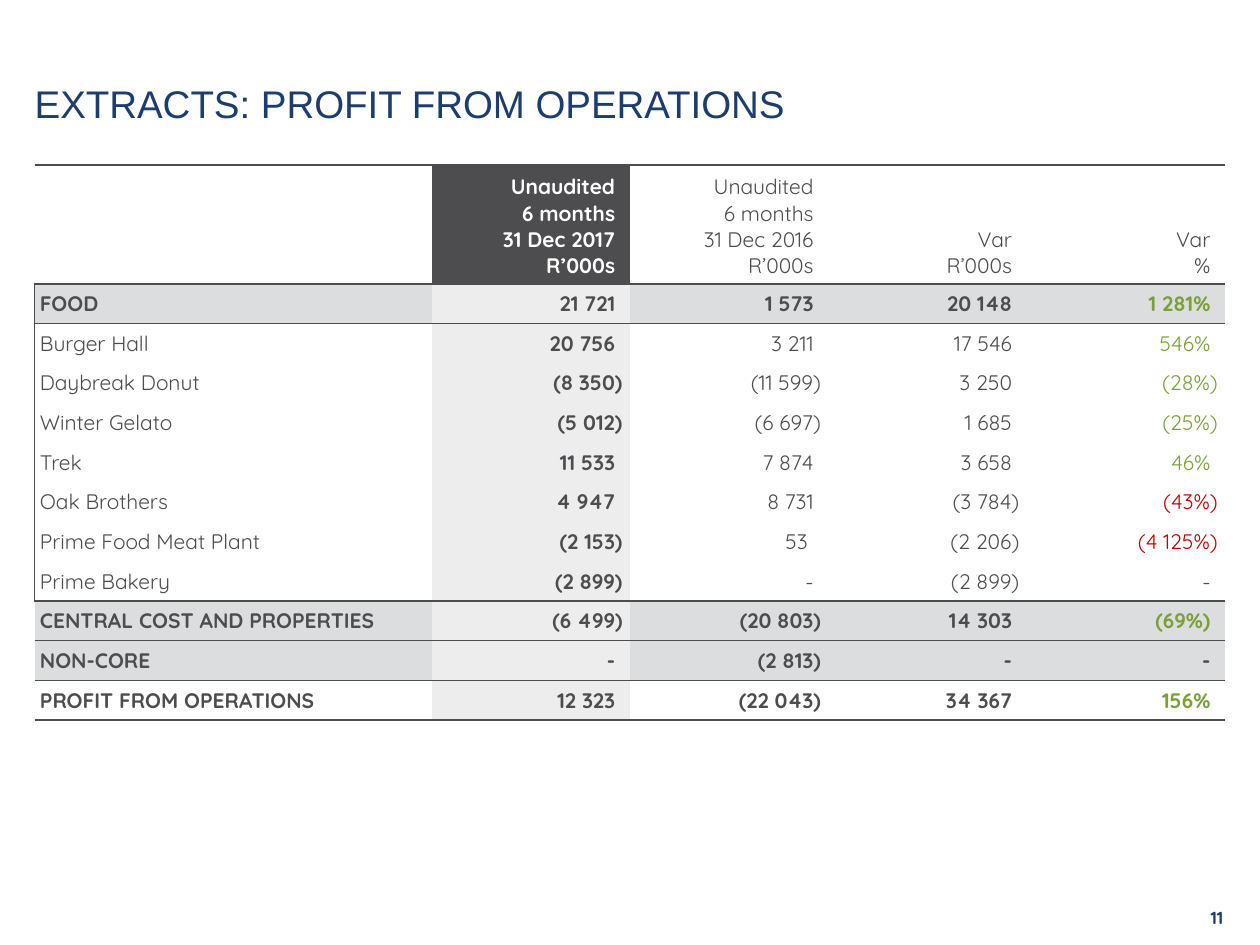
from typing import NamedTuple

from lxml.etree import SubElement
from pptx import Presentation
from pptx.dml.color import RGBColor
from pptx.enum.text import MSO_ANCHOR as Anchor, PP_ALIGN as Align
from pptx.oxml.ns import qn
from pptx.util import Pt

NAVY, GREY, WHITE = "1D3D6F", "4D4D4F", "FFFFFF"
GREEN, RED = "7BA037", "C00000"
BAND, CURRENT_YEAR = "DCDDDE", "EDEDEE"
FONT = "Quicksand"
NO_STYLE = "{2D5ABB26-0587-4C30-8999-92F81FD0307C}"

LEFT, TOP = 19.8, 94.3
LABEL_WIDTH, VALUE_WIDTH = 226.8, 113.4
HEADER_HEIGHT, ROW_HEIGHT = 68, 22.65
LABEL_INSET, VALUE_INSET, BRACKET_INSET, HEADER_BOTTOM = 3, 8.5, 4.3, 3


class Style(NamedTuple):
    size: float
    color: str
    bold: bool = False
    font: str = FONT


class Row(NamedTuple):
    label: str
    values: tuple[str, ...]
    borders: str = "L"
    bold: bool = False
    fill: str | None = None


HEADERS = (
    ("Unaudited\n6 months", "31 Dec 2017", "R’000s"),
    ("Unaudited\n6 months", "31 Dec 2016", "R’000s"),
    ("Var", "R’000s"),
    ("Var\n%",),
)
ROWS = (
    Row("FOOD", ("21 721", "1 573", "20 148", "1 281%"), "LT", True, BAND),
    Row("Burger Hall", ("20 756", "3 211", "17 546", "546%")),
    Row("Daybreak Donut", ("(8 350)", "(11 599)", "3 250", "(28%)")),
    Row("Winter Gelato", ("(5 012)", "(6 697)", "1 685", "(25%)")),
    Row("Trek", ("11 533", "7 874", "3 658", "46%")),
    Row("Oak Brothers", ("4 947", "8 731", "(3 784)", "(43%)")),
    Row("Prime Food Meat Plant", ("(2 153)", "53 ", "(2 206)", "(4 125%)")),
    Row("Prime Bakery", ("(2 899)", "-", "(2 899)", "-"), "LB"),
    Row("CENTRAL COST AND PROPERTIES", ("(6 499)", "(20 803)", "14 303", "(69%)"), "TB", True, BAND),
    Row("NON-CORE", ("-", "(2 813)", "-", "-"), "TB", True, BAND),
    Row("PROFIT FROM OPERATIONS", ("12 323", "(22 043)", "34 367", "156%"), "TB", True),
)


def rgb(color: str) -> RGBColor:
    return RGBColor.from_string(color)


def write(frame, paragraphs: tuple[str, ...], style: Style, align: Align) -> None:
    """Fill a text frame; a newline inside a paragraph becomes a line break."""
    for index, text in enumerate(paragraphs):
        paragraph = frame.add_paragraph() if index else frame.paragraphs[0]
        paragraph.alignment = align
        for number, line in enumerate(text.split("\n")):
            if number:
                paragraph.add_line_break()
            run = paragraph.add_run()
            run.text = line
            run.font.name = style.font
            run.font.size = Pt(style.size)
            run.font.bold = style.bold
            run.font.color.rgb = rgb(style.color)


def add_text(slide, box: tuple[float, ...], text: str, style: Style, align: Align, anchor: Anchor) -> None:
    frame = slide.shapes.add_textbox(*map(Pt, box)).text_frame
    frame.word_wrap = True
    frame.vertical_anchor = anchor
    frame.margin_left = frame.margin_top = frame.margin_right = frame.margin_bottom = 0
    write(frame, (text,), style, align)


def format_cell(cell, borders: str, fill: str | None, left: float = 0, right: float = 0, bottom: float = 0) -> None:
    properties = cell._tc.get_or_add_tcPr()
    for side in borders:
        line = SubElement(properties, qn(f"a:ln{side}"), w=str(Pt(1)))
        SubElement(SubElement(line, qn("a:solidFill")), qn("a:srgbClr"), val=GREY)
    if fill:
        cell.fill.solid()
        cell.fill.fore_color.rgb = rgb(fill)
    else:
        cell.fill.background()
    cell.margin_left, cell.margin_right = Pt(left), Pt(right)
    cell.margin_top, cell.margin_bottom = 0, Pt(bottom)
    cell.vertical_anchor = Anchor.BOTTOM if bottom else Anchor.MIDDLE


def fill_header(table) -> None:
    format_cell(table.cell(0, 0), "TB", None)
    for column, lines in enumerate(HEADERS, 1):
        current = column == 1
        cell = table.cell(0, column)
        format_cell(cell, "TB", GREY if current else None, right=VALUE_INSET, bottom=HEADER_BOTTOM)
        write(cell.text_frame, lines, Style(12, WHITE if current else GREY, current), Align.RIGHT)


def fill_row(table, index: int, row: Row) -> None:
    """Bracketed values overhang to the right, so that the digits line up."""
    label = table.cell(index, 0)
    format_cell(label, row.borders, row.fill, left=LABEL_INSET)
    write(label.text_frame, (row.label,), Style(12, GREY, row.bold), Align.LEFT)

    change = row.values[2]
    for column, value in enumerate(row.values, 1):
        current, percent = column == 1, column == 4
        overhangs = value.endswith(")") and not (percent and row.bold)
        color = GREY
        if percent and value != "-":
            color = RED if change.startswith("(") else GREEN
        cell = table.cell(index, column)
        format_cell(cell, row.borders.replace("L", ""), CURRENT_YEAR if current else row.fill,
                    right=BRACKET_INSET if overhangs else VALUE_INSET)
        write(cell.text_frame, (value,), Style(12, color, row.bold or current), Align.RIGHT)


def add_profit_table(slide) -> None:
    widths = [LABEL_WIDTH] + [VALUE_WIDTH] * len(HEADERS)
    heights = [HEADER_HEIGHT] + [ROW_HEIGHT] * len(ROWS)
    box = (LEFT, TOP, sum(widths), sum(heights))
    table = slide.shapes.add_table(len(heights), len(widths), *map(Pt, box)).table
    table.first_row = table.horz_banding = False
    table._tbl.tblPr.find(qn("a:tableStyleId")).text = NO_STYLE
    for column, width in zip(table.columns, widths):
        column.width = Pt(width)
    for table_row, height in zip(table.rows, heights):
        table_row.height = Pt(height)
    fill_header(table)
    for index, row in enumerate(ROWS, 1):
        fill_row(table, index, row)


def main() -> None:
    presentation = Presentation()
    presentation.slide_width, presentation.slide_height = Pt(720), Pt(540)
    slide = presentation.slides.add_slide(presentation.slide_layouts[6])
    add_text(slide, (665.3, 508.3, 33.8, 31.7), "11", Style(10, NAVY, True), Align.RIGHT, Anchor.MIDDLE)
    add_text(slide, (LEFT, 9.4, 578, 62.6), "EXTRACTS: PROFIT FROM OPERATIONS",
             Style(22, NAVY, font="Arial"), Align.LEFT, Anchor.BOTTOM)
    add_profit_table(slide)
    presentation.save("out.pptx")


if __name__ == "__main__":
    main()
